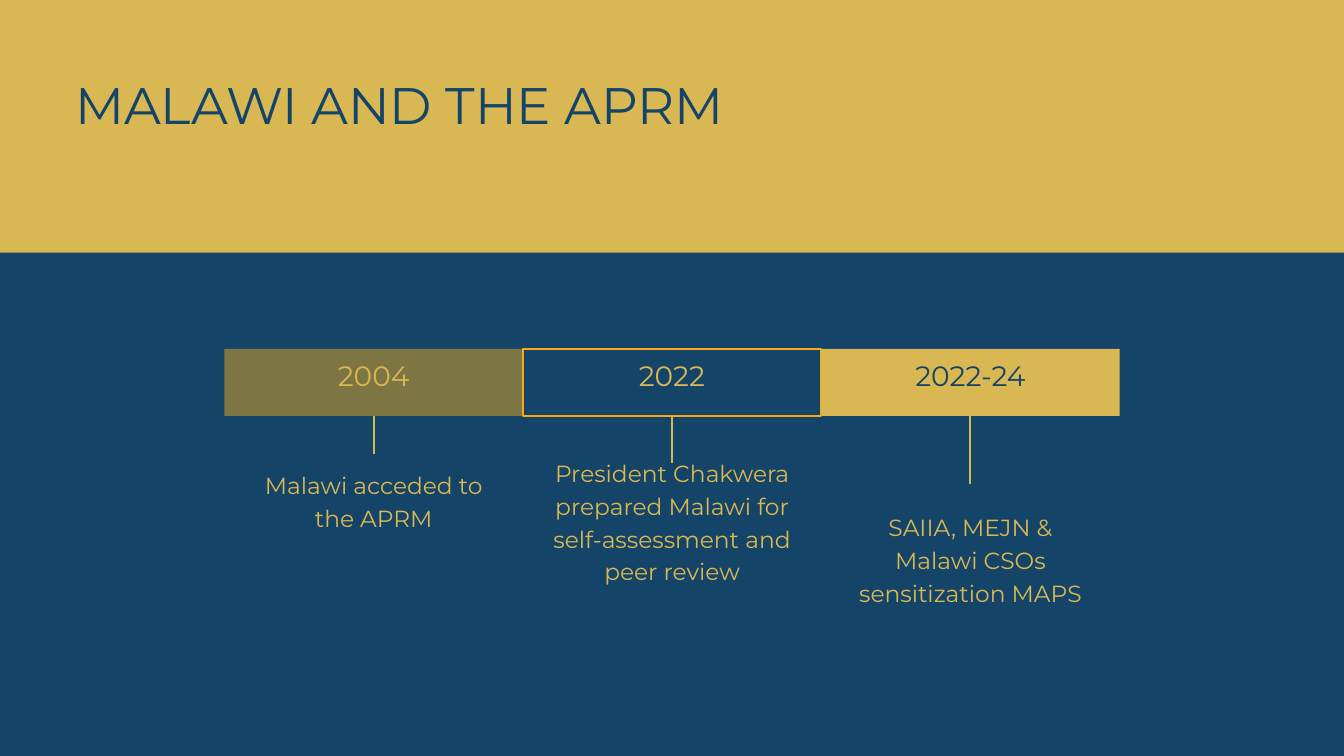
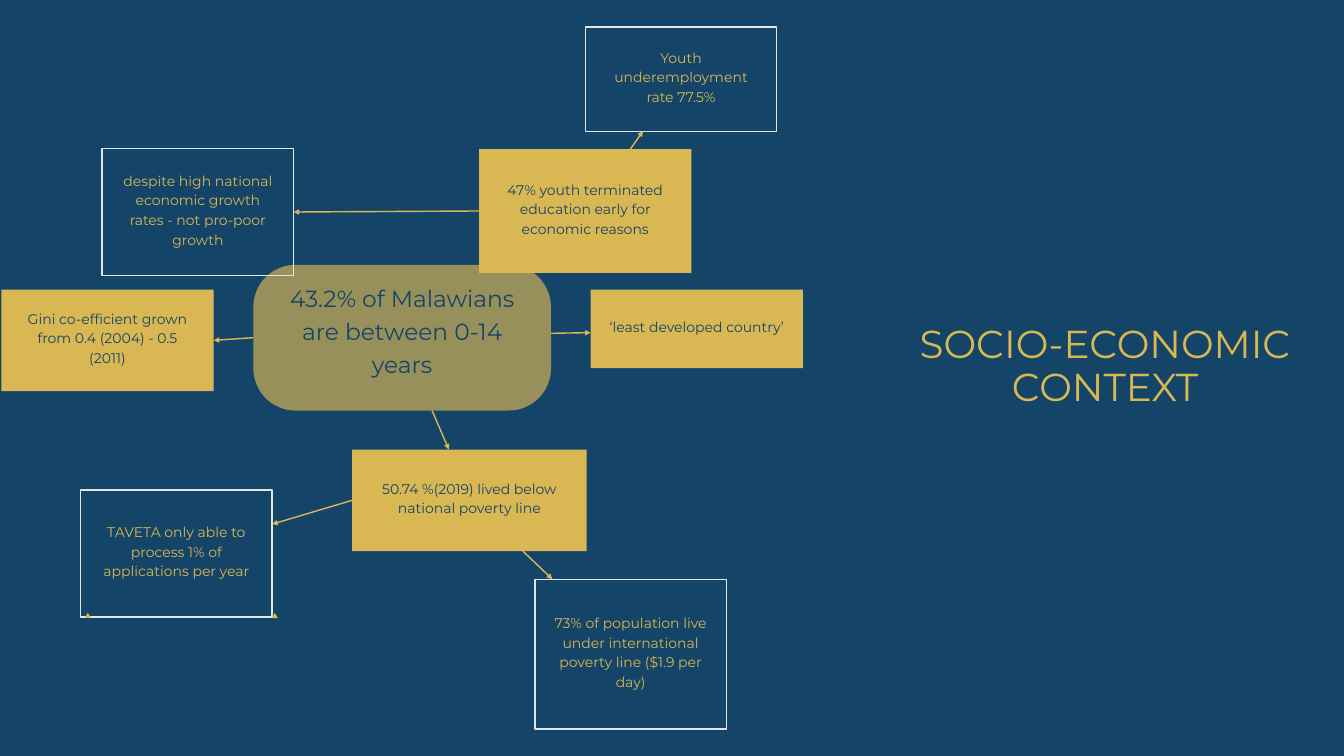
from dataclasses import dataclass

from lxml import etree
from pptx import Presentation
from pptx import util as u
from pptx.dml.color import RGBColor
from pptx.enum import shapes, text
from pptx.oxml.ns import qn


@dataclass(frozen=True)
class Theme:
    font: str = "Montserrat"
    navy: str = "144569"
    gold: str = "D9B752"
    olive: str = "7E7642"
    sage: str = "98905A"
    amber: str = "FDA715"
    pale: str = "E5E5E5"
    title: float = 55
    side: float = 41.7
    year: float = 30
    body: float = 25
    note: float = 15
    thick: float = 2.25
    thin: float = 1.5


look = Theme()
RECT = shapes.MSO_SHAPE.RECTANGLE
ROUND = shapes.MSO_SHAPE.ROUNDED_RECTANGLE
CENTER = text.PP_ALIGN.CENTER

# Grid: 20 columns by 11.25 rows of square cells
cell = u.Inches(1)
deck = Presentation()
deck.slide_width, deck.slide_height = 20 * cell, int(11.25 * cell)


def write(slide, words, place, kind=None, fill=None, edge=None, width=look.thin,
          ink=look.gold, size=look.body, lead=1.4, align=CENTER, pad=0, lift=0):
    """Add text at grid place, inside a shape if kind is given."""
    spot = [int(n * cell) for n in place]
    if kind is None:
        item = slide.shapes.add_textbox(*spot)
    else:
        item = slide.shapes.add_shape(kind, *spot)
        item.shadow.inherit = False
        for part, tint in ((item.fill, fill), (item.line.fill, edge)):
            if tint:
                part.solid()
                part.fore_color.rgb = RGBColor.from_string(tint)
            else:
                part.background()
        if edge:
            item.line.width = u.Pt(width)
    frame = item.text_frame
    frame.word_wrap = True
    frame.margin_left = frame.margin_right = int(pad * cell)
    # The lift raises the text block above the middle
    frame.margin_top = int(max(pad - lift, 0) * cell)
    frame.margin_bottom = int(max(pad, lift) * cell)
    frame.vertical_anchor = (text.MSO_ANCHOR.MIDDLE if kind
                             else text.MSO_ANCHOR.TOP)
    if words:
        para = frame.paragraphs[0]
        para.text = words
        para.alignment = align
        para.line_spacing = u.Pt(size * lead)
        para.font.name, para.font.size = look.font, u.Pt(size)
        para.font.color.rgb = RGBColor.from_string(ink)
    return item


def link(slide, start, end, width=look.thin, arrow=True, tie=None, join=None):
    """Draw a line; tie and join are (shape, side) for its two ends."""
    line = slide.shapes.add_connector(
        shapes.MSO_CONNECTOR.STRAIGHT, *[int(n * cell) for n in start + end])
    if tie:
        line.begin_connect(*tie)
    if join:
        line.end_connect(*join)
    line.line.width = u.Pt(width)
    line.line.color.rgb = RGBColor.from_string(look.gold)
    if arrow:
        etree.SubElement(line.line._get_or_add_ln(), qn("a:tailEnd"),
                         type="triangle")
    etree.SubElement(line._element.spPr, qn("a:effectLst"))


# Both slides: blank layout on navy
pages = []
for _ in range(2):
    page = deck.slides.add_slide(deck.slide_layouts[6])
    page.background.fill.solid()
    page.background.fill.fore_color.rgb = RGBColor.from_string(look.navy)
    pages.append(page)
past, web = pages

# Slide 1: title band
write(past, "", (0, 0, 20, 3.76), RECT, look.gold)
write(past, "MALAWI AND THE APRM", (1.12, 1.16, 11.99, 0.87), ink=look.navy,
      size=look.title, lead=1.1, align=text.PP_ALIGN.LEFT)

# Slide 1: timeline of year, fill, edge, ink, tick end, event, its top and height
steps = [
    ("2004", look.olive, None, look.gold, 6.76,
     "Malawi acceded to the APRM", 6.94, 0.94),
    ("2022", look.navy, look.amber, look.gold, 6.89,
     "President Chakwera prepared Malawi for self-assessment and peer review",
     6.77, 1.9),
    ("2022-24", look.gold, None, look.navy, 7.2,
     "SAIIA, MEJN & Malawi CSOs sensitization MAPS", 7.57, 1.42),
]
left, top, span, tall, wide = 3.34, 5.19, 4.44, 1, 3.65
for i, (year, fill, edge, ink, tip, event, row, deep) in enumerate(steps):
    x = left + i * span
    mid = x + span / 2
    bar = write(past, year, (x, top, span, tall), RECT, fill, edge, look.thick,
                ink, look.year, pad=0.06, lift=0.29)
    link(past, (mid, top + tall), (mid, tip), look.thick, False, tie=(bar, 2))
    write(past, event, (mid - wide / 2, row, wide, deep))

# Slide 2: centre of the web
core = write(web, "43.2% of Malawians are between 0-14 years",
             (3.77, 3.94, 4.43, 2.17), ROUND, look.sage, ink=look.navy,
             pad=0.28, lift=0.26)
core.adjustments[0] = 0.29

# Slide 2: filled causes, then outlined effects
facts = {
    "gini": ("Gini co-efficient grown from 0.4 (2004) - 0.5 (2011)",
             (0.02, 4.31, 3.16, 1.51)),
    "school": ("47% youth terminated education early for economic reasons",
               (7.13, 2.22, 3.16, 1.84)),
    "poor": ("50.74 %(2019) lived below national poverty line",
             (5.24, 6.69, 3.49, 1.51)),
    "least": ("‘least developed country’", (8.79, 4.31, 3.16, 1.17)),
}
ends = {
    "jobs": ("Youth underemployment rate 77.5%", (8.71, 0.4, 2.85, 1.56)),
    "growth": ("despite high national economic growth rates - not pro-poor growth",
               (1.52, 2.21, 2.85, 1.89)),
    "train": ("TAVETA only able to process 1% of applications per year",
              (1.2, 7.29, 2.85, 1.89)),
    "world": ("73% of population live under international poverty line "
              "($1.9 per day)", (7.96, 8.62, 2.85, 2.23)),
}
nodes = {}
for group, fill, edge, ink in ((facts, look.gold, None, look.navy),
                               (ends, None, look.pale, look.gold)):
    for name, (words, place) in group.items():
        nodes[name] = write(web, words, place, RECT, fill, edge, ink=ink,
                            size=look.note, pad=0.28, lift=0.1)

# Slide 2: arrows, joined where they meet the middle of a side
link(web, (3.77, 5.04), (3.18, 5.05), tie=(core, 1), join=(nodes["gini"], 3))
link(web, (7.13, 3.15), (4.38, 3.15), tie=(nodes["school"], 1),
     join=(nodes["growth"], 3))
link(web, (5.24, 7.44), (4.05, 7.8), tie=(nodes["poor"], 1))
for start, end in [
    ((8.2, 4.96), (8.79, 4.95)),
    ((7.56, 3.94), (7.37, 4.07)),
    ((6.43, 6.11), (6.68, 6.69)),
    ((9.38, 2.22), (9.57, 1.95)),
    ((7.78, 8.2), (8.22, 8.62)),
    ((1.29, 9.18), (1.26, 9.2)),
    ((4.05, 9.15), (4.14, 9.2)),
]:
    link(web, start, end)

# Slide 2: title at the side
write(web, "SOCIO-ECONOMIC CONTEXT", (13.58, 4.82, 5.73, 1.29),
      size=look.side, lead=1.1)

deck.save("out.pptx")
